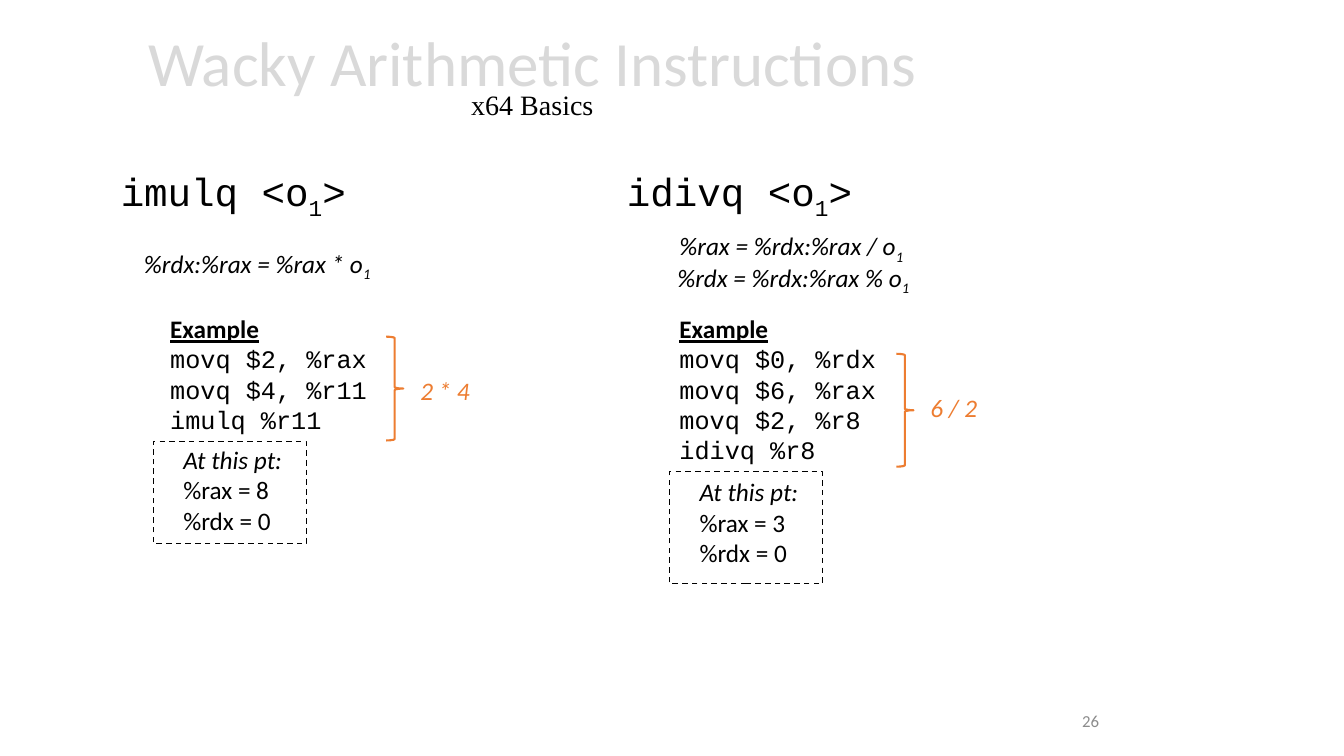
from dataclasses import dataclass

from pptx import Presentation
from pptx import util as u
from pptx.dml.color import RGBColor
from pptx.enum import dml, shapes, text

PX = 9144


@dataclass(frozen=True)
class Theme:
    body: str = "Calibri"
    code: str = "Courier New"
    serif: str = "Times New Roman"
    black: str = "000000"
    white: str = "FFFFFF"
    pale: str = "D9D9D9"
    grey: str = "8C8C8C"
    orange: str = "ED7D31"
    title_pt: int = 45
    heading_pt: int = 28
    subtitle_pt: int = 20
    body_pt: int = 18
    number_pt: int = 12


THEME = Theme()


@dataclass(frozen=True)
class Box:
    x: int
    y: int
    w: int
    h: int

    def emu(self) -> tuple[int, int, int, int]:
        return self.x * PX, self.y * PX, self.w * PX, self.h * PX


@dataclass(frozen=True)
class Line:
    words: str
    sub: str = ""
    tail: str = ""
    face: str = THEME.body
    size: int = THEME.body_pt
    color: str = THEME.black
    bold: bool = False
    italic: bool = False
    underline: bool = False


@dataclass(frozen=True)
class Instruction:
    name: str
    heading: Box
    formulas: tuple[tuple[Box, str], ...]
    example: Box
    code: tuple[str, ...]
    brace: Box
    result: Box
    expression: str
    frame: Box
    state: Box
    registers: tuple[str, ...]


def style_font(font, line: Line) -> None:
    font.name = line.face
    font.size = u.Pt(line.size)
    font.color.rgb = RGBColor.from_string(line.color)
    font.bold = line.bold
    font.italic = line.italic
    font.underline = line.underline


def add_text(slide, box: Box, lines: list[Line], wrap: bool = False):
    sp = slide.shapes.add_textbox(*box.emu())
    tf = sp.text_frame
    tf.word_wrap = wrap
    if not wrap:
        tf.auto_size = text.MSO_AUTO_SIZE.SHAPE_TO_FIT_TEXT
    for i, line in enumerate(lines):
        p = tf.add_paragraph() if i else tf.paragraphs[0]
        style_font(p.font, line)
        for part in (line.words, line.sub, line.tail):
            if part:
                r = p.add_run()
                r.text = part
                if part == line.sub:
                    r._r.get_or_add_rPr().set("baseline", "-25000")
    return tf


def add_outline(slide, kind, box: Box, color: str, width: float):
    sp = slide.shapes.add_shape(kind, *box.emu())
    sp.shadow.inherit = False
    sp.fill.background()
    sp.line.color.rgb = RGBColor.from_string(color)
    sp.line.width = u.Pt(width)
    return sp


def add_title(slide) -> None:
    tf = add_text(slide, Box(28, 9, 1000, 145), [Line("")], wrap=True)
    tf.vertical_anchor = text.MSO_ANCHOR.MIDDLE
    p = tf.paragraphs[0]
    p.alignment = text.PP_ALIGN.CENTER
    p.line_spacing = 0.7
    title = Line("Wacky Arithmetic Instructions", size=THEME.title_pt, color=THEME.pale)
    subtitle = Line("x64 Basics", face=THEME.serif, size=THEME.subtitle_pt)
    for i, line in enumerate((title, subtitle)):
        if i:
            p.add_line_break()
        r = p.add_run()
        r.text = line.words
        style_font(r.font, line)


def add_instruction(slide, item: Instruction) -> None:
    frame = add_outline(slide, shapes.MSO_SHAPE.RECTANGLE, item.frame, THEME.black, 1)
    frame.fill.solid()
    frame.fill.fore_color.rgb = RGBColor.from_string(THEME.white)
    frame.line.dash_style = dml.MSO_LINE.DASH
    add_text(slide, item.heading, [
        Line(f"{item.name} <o", "1", ">", face=THEME.code, size=THEME.heading_pt)])
    for box, formula in item.formulas:
        add_text(slide, box, [Line(formula, "1", italic=True)])
    add_text(slide, item.example, [
        Line("Example", bold=True, underline=True),
        *(Line(row, face=THEME.code) for row in item.code)])
    add_text(slide, item.state, [
        Line("At this pt:", italic=True), *(Line(row) for row in item.registers)])
    add_text(slide, item.result, [
        Line(item.expression, color=THEME.orange, italic=True)])
    add_outline(slide, shapes.MSO_SHAPE.RIGHT_BRACE, item.brace, THEME.orange, 1.5)


INSTRUCTIONS = (
    Instruction(
        name="imulq",
        heading=Box(110, 161, 247, 57),
        formulas=((Box(133, 241, 250, 40), "%rdx:%rax = %rax * o"),),
        example=Box(159, 306, 216, 131),
        code=("movq $2, %rax", "movq $4, %r11", "imulq %r11"),
        brace=Box(383, 334, 17, 103),
        result=Box(407, 367, 70, 40),
        expression="2 * 4",
        frame=Box(152, 438, 152, 101),
        state=Box(172, 436, 120, 101),
        registers=("%rax = 8", "%rdx = 0"),
    ),
    Instruction(
        name="idivq",
        heading=Box(612, 161, 247, 57),
        formulas=((Box(664, 224, 248, 40), "%rax = %rdx:%rax / o"),
                  (Box(662, 255, 256, 40), "%rdx = %rdx:%rax % o")),
        example=Box(664, 306, 216, 162),
        code=("movq $0, %rdx", "movq $6, %rax", "movq $2, %r8", "idivq %r8"),
        brace=Box(889, 351, 17, 112),
        result=Box(913, 384, 67, 40),
        expression="6 / 2",
        frame=Box(664, 468, 152, 111),
        state=Box(684, 468, 120, 101),
        registers=("%rax = 3", "%rdx = 0"),
    ),
)


def main() -> None:
    prs = Presentation()
    prs.slide_width, prs.slide_height = 1333 * PX, 750 * PX
    slide = prs.slides.add_slide(prs.slide_layouts[6])
    add_title(slide)
    for item in INSTRUCTIONS:
        add_instruction(slide, item)
    number = add_text(slide, Box(800, 695, 300, 40), [
        Line("26", size=THEME.number_pt, color=THEME.grey)], wrap=True)
    number.vertical_anchor = text.MSO_ANCHOR.MIDDLE
    number.paragraphs[0].alignment = text.PP_ALIGN.RIGHT
    prs.save("out.pptx")


if __name__ == "__main__":
    main()
